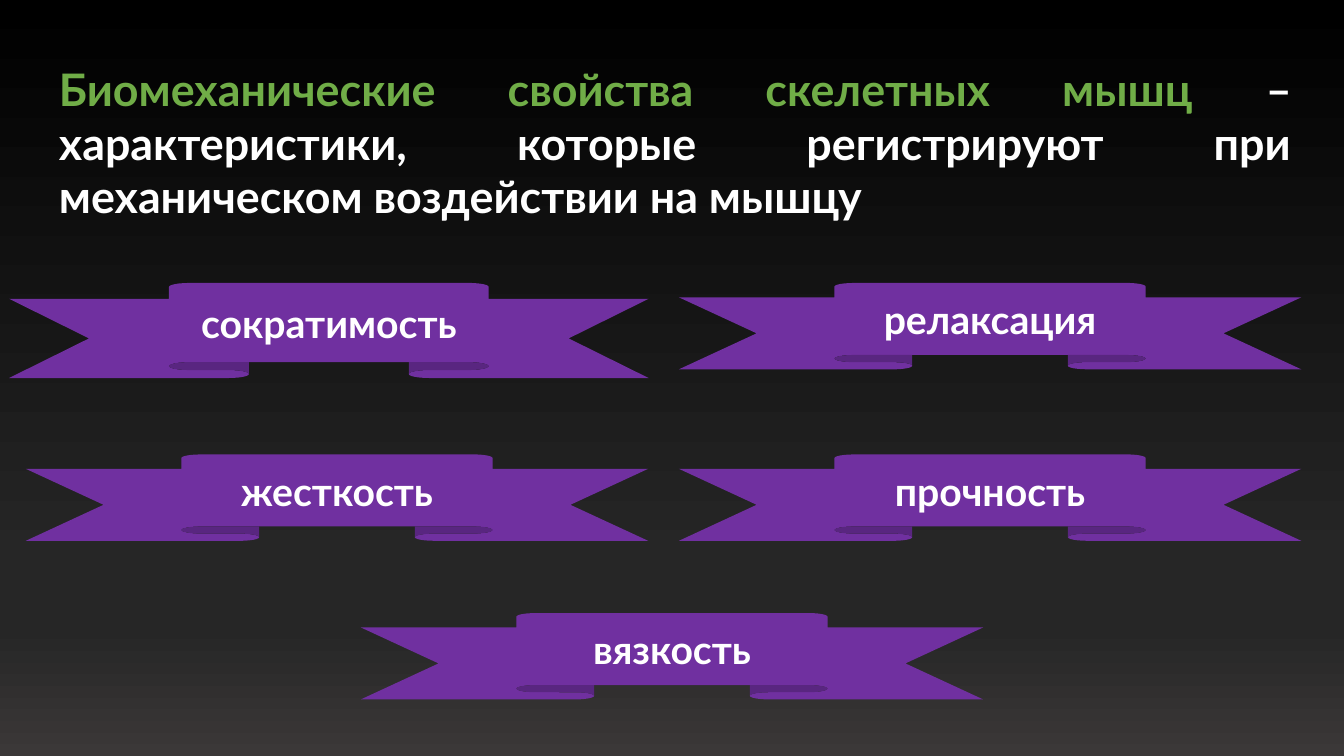
"""Build a slide on the biomechanical properties of skeletal muscles."""
from dataclasses import dataclass

from lxml.etree import SubElement
from pptx import Presentation
from pptx.dml.color import RGBColor as RGB
from pptx.enum.shapes import MSO_SHAPE as Shape
from pptx.enum.text import MSO_ANCHOR as Anchor, MSO_AUTO_SIZE as AutoSize, PP_ALIGN as Align
from pptx.oxml.ns import qn
from pptx.slide import Slide
from pptx.text.text import _Paragraph as Paragraph
from pptx.util import Pt


@dataclass(frozen=True)
class Theme:
    """Colours, font and type sizes of the slide."""
    font: str = "Lato"
    title_size: int = 32
    ribbon_size: int = 28
    text: str = "FFFFFF"
    accent: str = "70AD47"
    ribbon: str = "7030A0"
    backdrop: tuple = ((0, "000000"), (74, "262626"), (83, "262626"), (100, "3B3838"))


@dataclass(frozen=True)
class Ribbon:
    """A property name on a ribbon, measured in points."""
    text: str
    left: float
    top: float
    width: float = 444.6
    height: float = 61.7


THEME = Theme()
RIGHT, ROW_1, ROW_2, ROW_3 = 484.9, 202.1, 324.6, 437.9
RIBBONS = (
    Ribbon("сократимость", 6.5, ROW_1, 456.8, 67.9),
    Ribbon("релаксация", RIGHT, ROW_1),
    Ribbon("жесткость", 18.4, ROW_2),
    Ribbon("прочность", RIGHT, ROW_2),
    Ribbon("вязкость", 257.7, ROW_3),
)
TITLE = (
    ("Биомеханические свойства скелетных мышц ", THEME.accent),
    ("– характеристики, которые регистрируют при механическом воздействии на мышцу", THEME.text),
)


def add_run(p: Paragraph, text: str, size: float, color: str) -> None:
    """Append a bold run to a paragraph."""
    r = p.add_run()
    r.text = text
    r.font.name, r.font.size, r.font.bold = THEME.font, Pt(size), True
    r.font.color.rgb = RGB.from_string(color)


def paint_background(s: Slide) -> None:
    """Fill the background with a top-to-bottom gradient."""
    fill = s.background.fill
    fill.gradient()
    fill.gradient_angle = 270
    stops = s.element.find(".//" + qn("a:gsLst"))
    for stop in list(stops):
        stops.remove(stop)
    for percent, color in THEME.backdrop:
        stop = SubElement(stops, qn("a:gs"), pos=str(percent * 1000))
        SubElement(stop, qn("a:srgbClr"), val=color)


def write_title(s: Slide) -> None:
    """Place and fill the title placeholder."""
    sp = s.shapes.title
    sp.left, sp.top, sp.width, sp.height = Pt(34.9), Pt(40.3), Pt(895), Pt(123.8)
    tf = sp.text_frame
    tf.word_wrap, tf.auto_size, tf.vertical_anchor = True, AutoSize.NONE, Anchor.TOP
    p = tf.paragraphs[0]
    p.alignment, p.line_spacing = Align.JUSTIFY, 1.0
    p.space_before = Pt(0)
    for text, color in TITLE:
        add_run(p, text, THEME.title_size, color)


def add_ribbon(s: Slide, ribbon: Ribbon) -> None:
    """Draw one labelled ribbon."""
    sp = s.shapes.add_shape(Shape.UP_RIBBON, Pt(ribbon.left), Pt(ribbon.top),
                            Pt(ribbon.width), Pt(ribbon.height))
    sp.shadow.inherit = False
    sp.fill.solid()
    sp.fill.fore_color.rgb = RGB.from_string(THEME.ribbon)
    sp.line.fill.background()
    tf = sp.text_frame
    tf.word_wrap, tf.vertical_anchor = True, Anchor.MIDDLE
    p = tf.paragraphs[0]
    p.alignment = Align.CENTER
    add_run(p, ribbon.text, THEME.ribbon_size, THEME.text)


def main() -> None:
    """Build and save the presentation."""
    prs = Presentation()
    prs.slide_width, prs.slide_height = Pt(960), Pt(540)
    s = prs.slides.add_slide(prs.slide_layouts.get_by_name("Title Only"))
    paint_background(s)
    write_title(s)
    for ribbon in RIBBONS:
        add_ribbon(s, ribbon)
    prs.save("out.pptx")


if __name__ == "__main__":
    main()
